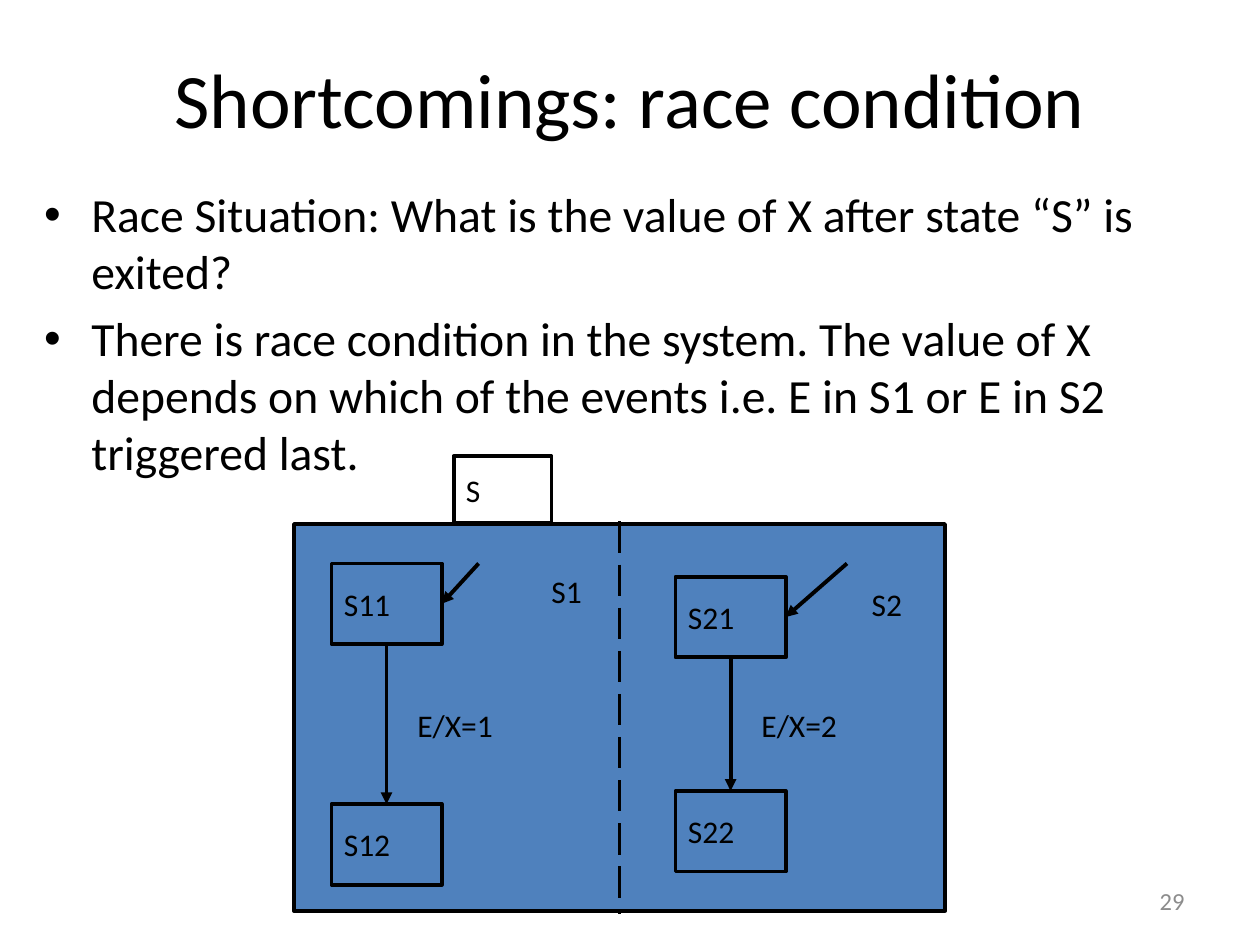
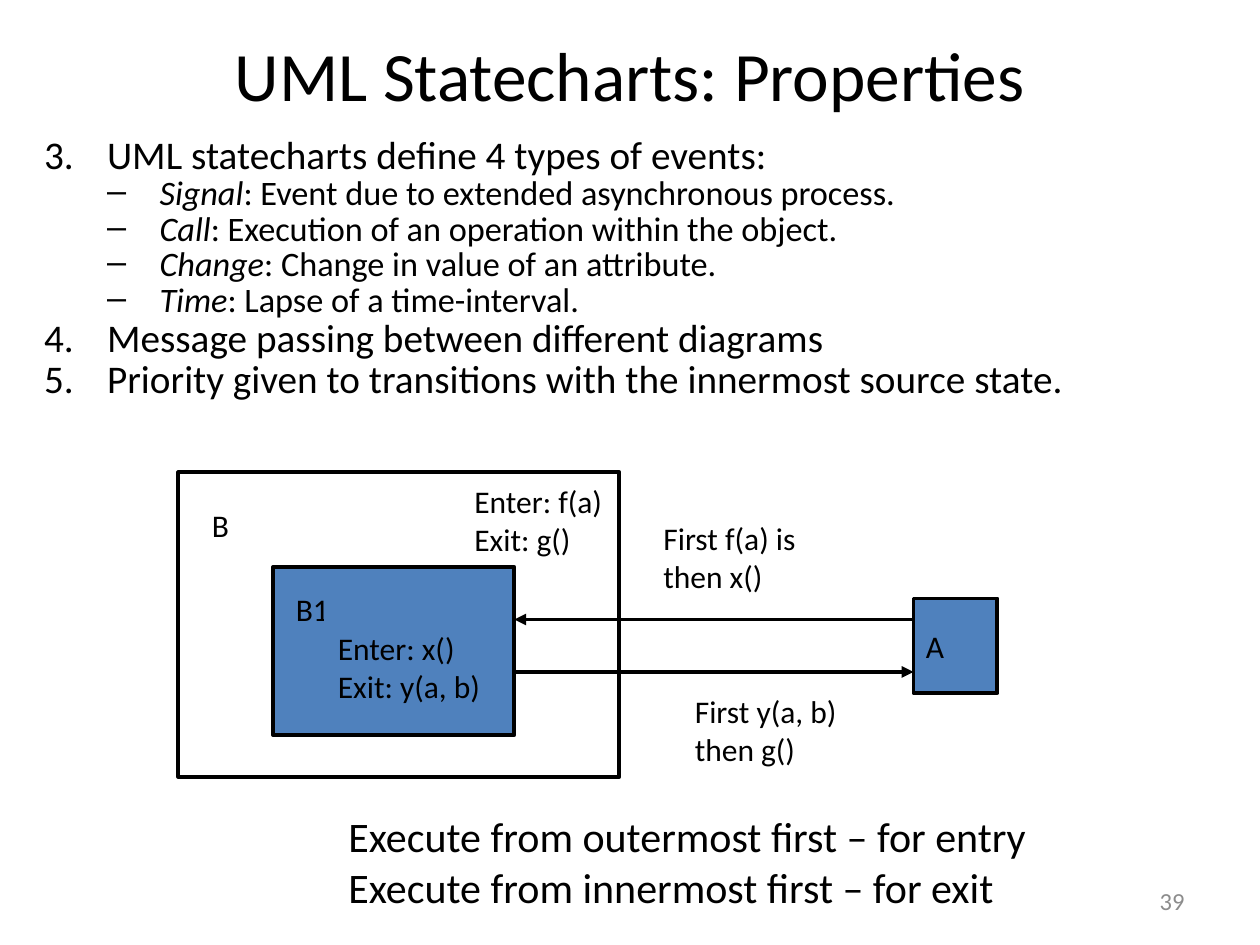
from lxml.etree import SubElement
from pptx import Presentation
from pptx.dml.color import RGBColor
from pptx.enum.dml import MSO_LINE
from pptx.enum.shapes import MSO_CONNECTOR, MSO_SHAPE
from pptx.enum.text import MSO_ANCHOR as Anchor, MSO_AUTO_SIZE, PP_ALIGN as Align
from pptx.oxml.ns import qn
from pptx.util import Pt

BLACK = RGBColor(0x00, 0x00, 0x00)
WHITE = RGBColor(0xFF, 0xFF, 0xFF)
BLUE = RGBColor(0x4F, 0x81, 0xBD)
GREY = RGBColor(0x8C, 0x8C, 0x8C)
FONT = "Calibri"
LINE_WIDTH = 2.25
TOP, RIGHT, BOTTOM = 0, 3, 2


def set_format(target, **values):
    for name, value in values.items():
        setattr(target, name, value)


def place(shape, left, top, width, height):
    set_format(shape, left=Pt(left), top=Pt(top), width=Pt(width), height=Pt(height))


def add_span(para, text, size, color=BLACK, italic=None):
    span = para.add_run()
    span.text = text
    set_format(span.font, name=FONT, size=Pt(size), italic=italic)
    span.font.color.rgb = color


def add_page(deck, title, title_area, title_size, number):
    """Add a page with its title and page number."""
    page = deck.slides.add_slide(deck.slide_layouts[1])
    heading = page.shapes.title
    place(heading, *title_area)
    set_format(heading.text_frame, auto_size=MSO_AUTO_SIZE.NONE,
               vertical_anchor=Anchor.MIDDLE)
    add_span(heading.text_frame.paragraphs[0], title, title_size)

    footer = page.shapes.add_textbox(Pt(516), Pt(500.4), Pt(168), Pt(28.8))
    set_format(footer.text_frame, word_wrap=True, vertical_anchor=Anchor.MIDDLE)
    para = footer.text_frame.paragraphs[0]
    para.alignment = Align.RIGHT
    add_span(para, number, 14, GREY)
    return page


def add_list(page, area, items, levels, spacing=None):
    """Fill the body with (level, number, term, text); levels hold (size, margin, hang)."""
    body = page.placeholders[1]
    place(body, *area)
    frame = body.text_frame
    frame.auto_size = MSO_AUTO_SIZE.NONE
    for index, (level, number, term, text) in enumerate(items):
        para = frame.add_paragraph() if index else frame.paragraphs[0]
        set_format(para, level=level, line_spacing=spacing)
        size, margin, hang = levels[level]
        properties = para._p.get_or_add_pPr()
        properties.set("marL", str(Pt(margin)))
        properties.set("indent", str(-Pt(hang)))
        if number:
            SubElement(properties, qn("a:buFont"), typeface="+mj-lt")
            SubElement(properties, qn("a:buAutoNum"), type="arabicPeriod",
                       startAt=str(number))
        if term:
            add_span(para, term, size, italic=True)
        add_span(para, text, size)


def add_box(page, area, lines=(), fill=BLUE, border=BLACK, size=18):
    box = page.shapes.add_shape(MSO_SHAPE.RECTANGLE, *map(Pt, area))
    box.shadow.inherit = False
    box.fill.solid()
    box.fill.fore_color.rgb = fill
    box.line.color.rgb = border
    box.line.width = Pt(LINE_WIDTH)
    frame = box.text_frame
    set_format(frame, word_wrap=False, vertical_anchor=Anchor.MIDDLE)
    for index, text in enumerate(lines):
        para = frame.add_paragraph() if index else frame.paragraphs[0]
        para.alignment = Align.LEFT
        add_span(para, text, size)
    return box


def add_label(page, area, lines, fill=BLUE, size=18):
    """Add a box whose border blends into its fill."""
    return add_box(page, area, lines, fill, fill, size)


def add_line(page, start, end, arrow=True):
    line = page.shapes.add_connector(MSO_CONNECTOR.STRAIGHT, *map(Pt, start + end))
    line.line.color.rgb = BLACK
    line.line.width = Pt(LINE_WIDTH)
    SubElement(line._element.spPr, qn("a:effectLst"))
    if arrow:
        SubElement(line.line._get_or_add_ln(), qn("a:tailEnd"), type="triangle")
    else:
        line.line.dash_style = MSO_LINE.LONG_DASH
    return line


def add_region(page, left, first_top, second_top, names, event, entry):
    """Add one concurrent region: two states, their transition and the entry arrow."""
    width, height = 63, 46
    first, second = (add_box(page, (left, top, width, height), [name])
                     for top, name in zip((first_top, second_top), names))
    add_label(page, (left + 42, 391, width, height), [event])
    middle = left + width / 2
    transition = add_line(page, (middle, first_top + height), (middle, second_top))
    transition.begin_connect(first, BOTTOM)
    transition.end_connect(second, TOP)
    arrow = add_line(page, entry, (left + width, first_top + height / 2))
    arrow.end_connect(first, RIGHT)


def add_race_page(deck):
    page = add_page(deck, "Shortcomings: race condition", (36, 21.6, 648, 68.4), 44, "29")
    add_list(page, (18, 102.24, 684, 147), [
        (0, None, None, "Race Situation: What is the value of X after state “S” is exited?"),
        (0, None, None, "There is race condition in the system. The value of X depends on "
                        "which of the events i.e. E in S1 or E in S2 triggered last."),
    ], [(27.2, 27, 27)])
    add_box(page, (168, 299.5, 372, 221))
    add_region(page, 189.4, 322, 459.5, ("S11", "S12"), "E/X=1", (273.5, 322))
    add_region(page, 386, 329.6, 452, ("S21", "S22"), "E/X=2", (484, 322))
    add_line(page, (354, 298), (354, 522), arrow=False)
    add_label(page, (308, 314.5, 35, 46), ["S1"])
    add_label(page, (491, 322, 35, 46), ["S2"])
    add_box(page, (259.2, 260.8, 56, 38.2), ["S"], fill=WHITE)


def add_properties_page(deck):
    page = add_page(deck, "UML Statecharts: Properties", (36, 21.6, 648, 41), 39.6, "39")
    add_list(page, (18, 78, 687, 174), [
        (0, 3, None, "UML statecharts define 4 types of events:"),
        (1, None, "Signal", ": Event due to extended asynchronous process."),
        (1, None, "Call", ": Execution of an operation within the object."),
        (1, None, "Change", ": Change in value of an attribute."),
        (1, None, "Time", ": Lapse of a time-interval."),
        (0, 4, None, "Message passing between different diagrams"),
        (0, 5, None, "Priority given to transitions with the innermost source state."),
    ], [(22.4, 36, 36), (19.6, 66, 30)], spacing=0.7)
    add_box(page, (102, 270, 252, 174), fill=WHITE)
    add_box(page, (522, 342, 48, 54), ["A"])
    add_box(page, (156, 324, 138, 96))
    add_label(page, (114, 282, 36, 36), ["B"], WHITE)
    add_label(page, (162, 330, 36, 36), ["B1"])
    add_label(page, (264, 276, 72, 42), ["Enter: f(a)", "Exit: g()"], WHITE)
    add_label(page, (186, 354, 102, 54), ["Enter: x()", "Exit: y(a, b)"])
    add_line(page, (522, 354), (294, 354))
    add_line(page, (294, 384), (522, 384))
    add_label(page, (390, 396, 102, 42), ["First y(a, b)", "then g()"], WHITE)
    add_label(page, (372, 294, 120, 48), ["First f(a) is", "then x()"], WHITE)
    add_label(page, (192, 462, 372, 60), ["Execute from outermost first – for entry",
                                         "Execute from innermost first – for exit"],
              WHITE, 24)


def main():
    deck = Presentation()
    set_format(deck, slide_width=Pt(720), slide_height=Pt(540))
    add_race_page(deck)
    add_properties_page(deck)
    deck.save("out.pptx")


if __name__ == "__main__":
    main()
